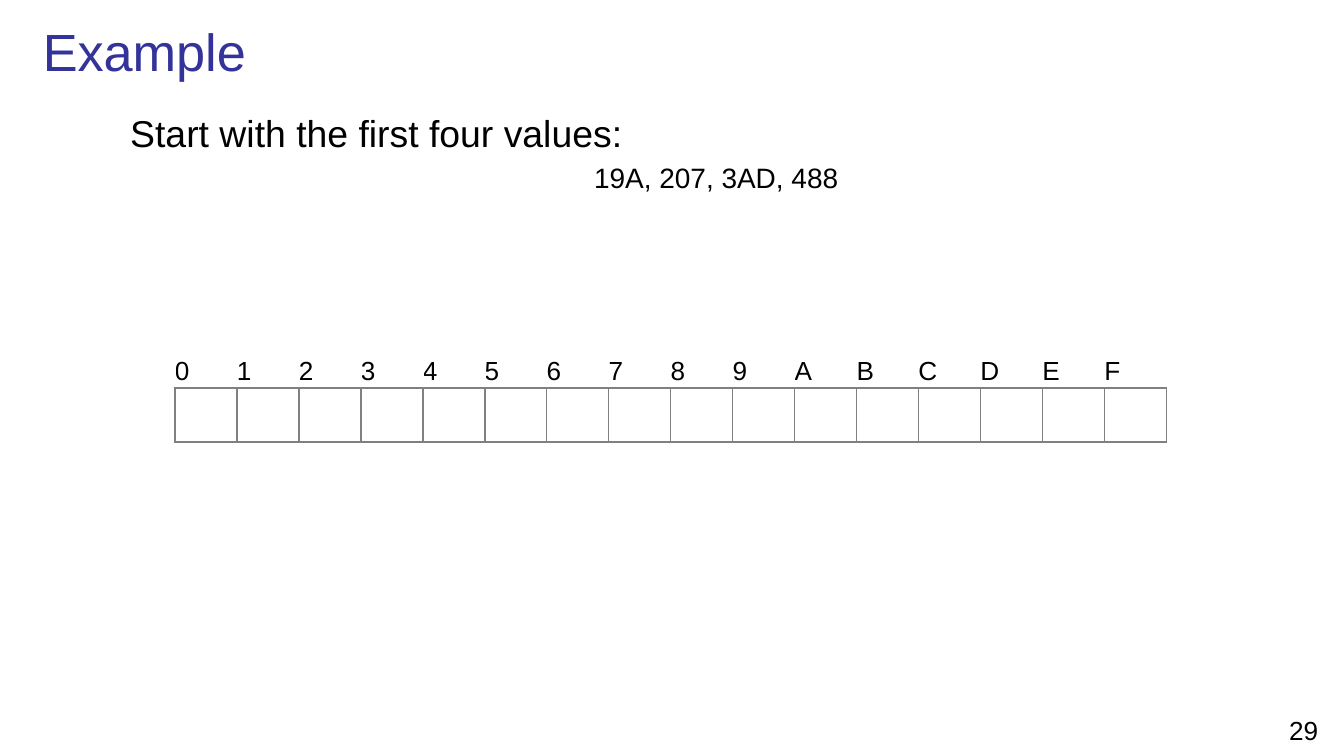
from lxml import etree
from pptx import Presentation
from pptx.dml.color import RGBColor
from pptx.enum import text as t
from pptx.oxml.ns import qn
from pptx.util import Pt

FONT = "Arial"
BLACK, BLUE, GREY = "000000", "333399", "808080"
LEFT, MID = t.PP_ALIGN.LEFT, t.PP_ALIGN.CENTER
TOP, CENTER = t.MSO_ANCHOR.TOP, t.MSO_ANCHOR.MIDDLE

# Box, anchor, lines of (words, size, colour, alignment, indent, space before)
TEXTS = [
    ((15.84, 5.76, 701.3, 42.5), CENTER,
     [("Example", 28, BLUE, LEFT, 0, 0)]),
    ((31.7, 55.4, 659.5, 315.4), TOP,
     [("Start with the first four values:", 20, BLACK, LEFT, 31, 3),
      ("19A, 207, 3AD, 488", 15, BLACK, MID, 44.6, 3)]),
    ((676.8, 379.4, 43.2, 21.6), TOP,
     [("29", 14, BLACK, MID, 0, 0)]),
]
SLOTS = "0123456789ABCDEF"
GRID_X, GRID_Y, SLOT_W = 93.7, 190, 33.2
ROWS = (18, 28.8)


def color(hexa):
    return RGBColor.from_string(hexa)


def write(para, words, size, hue):
    run = para.add_run()
    run.text = words
    run.font.name, run.font.size = FONT, Pt(size)
    run.font.color.rgb = color(hue)


def add_text(slide, box, anchor, lines):
    frame = slide.shapes.add_textbox(*map(Pt, box)).text_frame
    frame.word_wrap = True
    frame.vertical_anchor = anchor
    for i, (words, size, hue, align, indent, gap) in enumerate(lines):
        para = frame.add_paragraph() if i else frame.paragraphs[0]
        para.alignment = align
        para.space_before = Pt(gap)
        para._p.get_or_add_pPr().set("marL", str(Pt(indent)))
        write(para, words, size, hue)


def rule(cell, sides):
    """Draw a 1 pt grey border on the given sides of a cell."""
    props = cell._tc.get_or_add_tcPr()
    for side in sides:
        line = etree.SubElement(props, qn("a:ln" + side), w=str(Pt(1)))
        fill = etree.SubElement(line, qn("a:solidFill"))
        etree.SubElement(fill, qn("a:srgbClr"), val=GREY)


def add_grid(slide):
    table = slide.shapes.add_table(
        len(ROWS), len(SLOTS), Pt(GRID_X), Pt(GRID_Y),
        Pt(SLOT_W * len(SLOTS)), Pt(sum(ROWS))).table
    table.first_row = table.horz_banding = False
    for row, high in zip(table.rows, ROWS):
        row.height = Pt(high)
    for i, name in enumerate(SLOTS):
        table.columns[i].width = Pt(SLOT_W)
        head, slot = table.cell(0, i), table.cell(1, i)
        rule(head, "B")
        rule(slot, "LRTB")
        head.margin_left = head.margin_right = Pt(0)
        head.margin_top = head.margin_bottom = Pt(0)
        head.vertical_anchor = CENTER
        write(head.text_frame.paragraphs[0], name, 14, BLACK)
        for cell in (head, slot):
            cell.fill.background()


def main():
    deck = Presentation()
    deck.slide_width, deck.slide_height = Pt(720), Pt(405)
    slide = deck.slides.add_slide(deck.slide_layouts[6])
    for item in TEXTS:
        add_text(slide, *item)
    add_grid(slide)
    deck.save("out.pptx")


if __name__ == "__main__":
    main()
